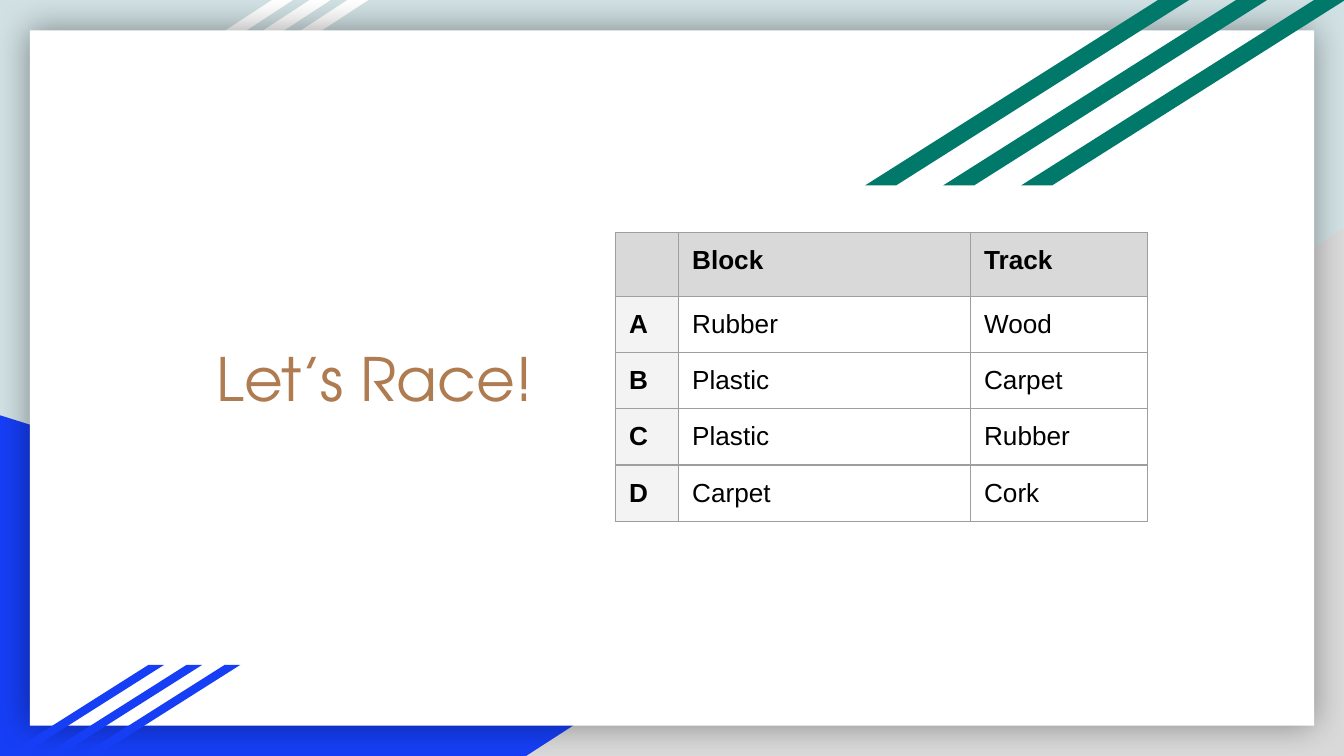
from dataclasses import dataclass

from lxml import etree
from pptx import Presentation
from pptx import util as u
from pptx.dml.color import RGBColor
from pptx.enum import shapes, text
from pptx.oxml import ns


@dataclass(frozen=True)
class Theme:
    backdrop: str = "D0E0E3"
    white: str = "FFFFFF"
    blue: str = "163EF5"
    grey: str = "D9D9D9"
    green: str = "00796B"
    brown: str = "AF7B51"
    black: str = "000000"
    label: str = "F3F3F3"
    border: str = "9E9E9E"
    title_font: str = "TeX Gyre Adventor"
    body_font: str = "Arial"
    title_size: int = 32
    body_size: int = 14


THEME = Theme()
KIND = shapes.MSO_SHAPE
INSET = u.Pt(7.2)
INSETS = {f"margin_{side}": INSET for side in ("left", "top", "right", "bottom")}
ROWS = [
    ("", "Block", "Track"),
    ("A", "Rubber", "Wood"),
    ("B", "Plastic", "Carpet"),
    ("C", "Plastic", "Rubber"),
    ("D", "Carpet", "Cork"),
]


def colour(value):
    return RGBColor.from_string(value)


def set_values(target, values):
    for name, value in values.items():
        setattr(target, name, value)


def add_xml(parent, tag, **values):
    return etree.SubElement(parent, ns.qn(tag), values)


def add_block(page, kind, place, fill):
    block = page.shapes.add_shape(kind, *map(u.Pt, place))
    block.shadow.inherit = False
    block.fill.solid()
    block.fill.fore_color.rgb = colour(fill)
    block.line.fill.background()
    return block


def add_stripes(page, place, step, slant, fill):
    left, top, width, height = place
    for index in (2, 1, 0):
        stripe = add_block(
            page, KIND.PARALLELOGRAM, (left + index * step, top, width, height), fill
        )
        stripe.adjustments[0] = slant


def add_card(page, place):
    card = add_block(page, KIND.RECTANGLE, place, THEME.white)
    effects = card._element.spPr.find(ns.qn("a:effectLst"))
    glow = add_xml(
        effects, "a:outerShdw", blurRad=str(u.Pt(18)), dist="0", dir="0",
        algn="ctr", rotWithShape="0",
    )
    shade = add_xml(glow, "a:srgbClr", val=THEME.black)
    add_xml(shade, "a:alpha", val="40000")


def write(para, words, values, fill):
    span = para.add_run()
    span.text = words
    set_values(span.font, values)
    span.font.color.rgb = colour(fill)


def place_title(page, place, words):
    title = page.shapes.title
    page.shapes._spTree.append(title._element)
    set_values(title, dict(zip(("left", "top", "width", "height"), map(u.Pt, place))))
    frame = title.text_frame
    set_values(frame, {
        **INSETS,
        "word_wrap": True,
        "auto_size": text.MSO_AUTO_SIZE.NONE,
        "vertical_anchor": text.MSO_ANCHOR.MIDDLE,
    })
    para = frame.paragraphs[0]
    para.alignment = text.PP_ALIGN.CENTER
    font = {"name": THEME.title_font, "size": u.Pt(THEME.title_size), "bold": False}
    write(para, words, font, THEME.brown)


def add_borders(cell):
    properties = cell._tc.get_or_add_tcPr()
    for side in ("L", "R", "T", "B"):
        line = add_xml(properties, f"a:ln{side}", w=str(u.Pt(0.75)))
        add_xml(add_xml(line, "a:solidFill"), "a:srgbClr", val=THEME.border)


def format_cell(cell, words, bold, fill):
    set_values(cell, INSETS)
    add_borders(cell)
    if fill:
        cell.fill.solid()
        cell.fill.fore_color.rgb = colour(fill)
    else:
        cell.fill.background()
    para = cell.text_frame.paragraphs[0]
    if words:
        font = {"name": THEME.body_font, "size": u.Pt(THEME.body_size), "bold": bold}
        write(para, words, font, THEME.black)
    else:
        add_xml(para._p, "a:endParaRPr", sz=str(THEME.body_size * 100))


def add_race_table(page, left, top, widths, heights):
    frame = page.shapes.add_table(
        len(heights), len(widths), u.Pt(left), u.Pt(top),
        u.Pt(sum(widths)), u.Pt(sum(heights)),
    )
    table = frame.table
    set_values(table, {"first_row": False, "horz_banding": False})
    for column, width in zip(table.columns, widths):
        column.width = u.Pt(width)
    for row, height in zip(table.rows, heights):
        row.height = u.Pt(height)
    for row_index, row in enumerate(ROWS):
        for column_index, words in enumerate(row):
            heading = row_index == 0
            label = column_index == 0
            fill = THEME.grey if heading else THEME.label if label else None
            format_cell(
                table.cell(row_index, column_index), words, heading or label, fill
            )


def main():
    deck = Presentation()
    set_values(deck, {"slide_width": u.Pt(720), "slide_height": u.Pt(405)})
    page = deck.slides.add_slide(deck.slide_layouts[5])
    page.background.fill.solid()
    page.background.fill.fore_color.rgb = colour(THEME.backdrop)

    add_block(page, KIND.RIGHT_TRIANGLE, (0, 222.5, 580.3, 182.5), THEME.blue)
    corner = add_block(page, KIND.RIGHT_TRIANGLE, (282, 122.2, 438, 282.8), THEME.grey)
    corner._element.spPr.xfrm.set("flipH", "1")
    add_stripes(page, (20.2, 0, 136.8, 82.1), 20.2, 1.53, THEME.white)
    add_card(page, (16, 16.2, 688, 372.6))
    add_stripes(page, (2.9, 356.2, 85, 48.5), 20.4, 1.58, THEME.blue)
    add_stripes(page, (463.5, 0, 173.5, 99.3), 41.8, 1.58, THEME.green)

    place_title(page, (105.1, 102.2, 191.5, 200.2), "Let’s Race!")
    add_race_table(page, 329.8, 124.5, (33.8, 156.4, 94.8), (34.2, 30.1, 30.1, 30.1, 30.1))
    deck.save("out.pptx")


if __name__ == "__main__":
    main()
